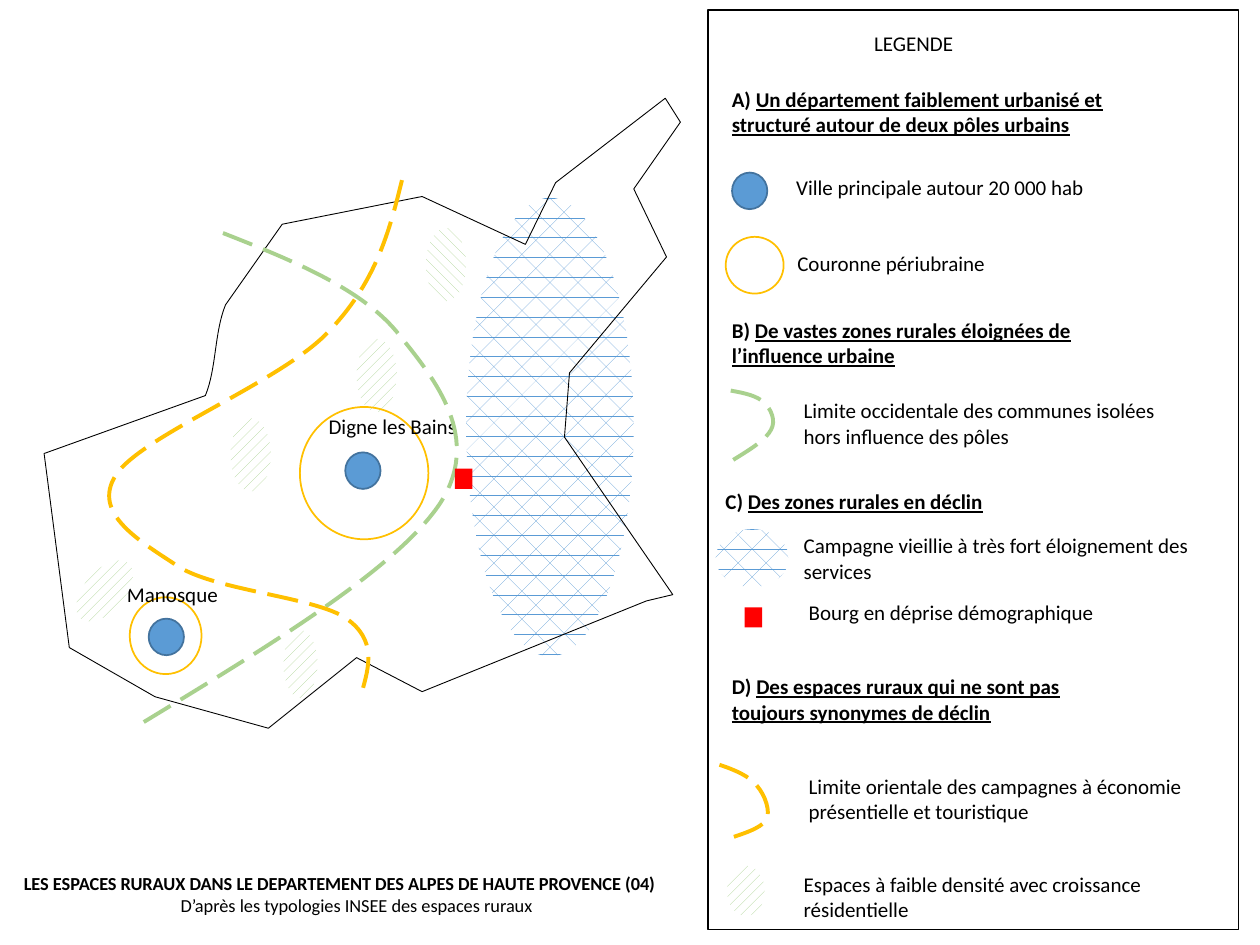
"""Build the map of rural areas in Alpes de Haute Provence with its legend."""
from dataclasses import dataclass
from typing import Optional

import lxml.etree
import pptx
import pptx.dml.color
import pptx.enum.dml
import pptx.enum.shapes
import pptx.enum.text
import pptx.oxml.ns
import pptx.util

OVAL = pptx.enum.shapes.MSO_SHAPE.OVAL
RECTANGLE = pptx.enum.shapes.MSO_SHAPE.RECTANGLE
PATTERN = pptx.enum.dml.MSO_PATTERN
UPWARD = PATTERN.DASHED_UPWARD_DIAGONAL
DOWNWARD = PATTERN.DASHED_DOWNWARD_DIAGONAL
BLACK, WHITE, RED = "000000", "FFFFFF", "FF0000"
BLUE, DARK_BLUE, GREEN, AMBER = "5B9BD5", "43739E", "A9D18E", "FFC000"


@dataclass(frozen=True)
class Style:
    kind: int = OVAL
    fill: Optional[str] = None
    pattern: Optional[int] = None
    line: Optional[str] = None
    line_width: float = 1


@dataclass(frozen=True)
class Symbol:
    style: Style
    left: float
    top: float
    width: float
    height: float
    rotation: float = 0


@dataclass(frozen=True)
class Route:
    left: float
    top: float
    width: float
    height: float
    start: tuple
    segments: tuple
    color: str
    line_width: float = 2.25
    dashed: bool = True
    closed: bool = False


@dataclass(frozen=True)
class Label:
    text: str
    left: float
    top: float
    width: float
    height: float = 0.3
    wrap: bool = False
    prefix: str = ""


TOWN = Style(fill=BLUE, line=DARK_BLUE)
RING = Style(line=AMBER)
VILLAGE = Style(kind=RECTANGLE, fill=RED)
REMOTE = Style(fill=BLUE, pattern=PATTERN.DIVOT)
GROWTH = Style(fill=GREEN, pattern=UPWARD)
GROWTH_DOWN = Style(fill=GREEN, pattern=DOWNWARD)
FRAME = Style(kind=RECTANGLE, line=BLACK, line_width=0.75)

BACK_SYMBOLS = (
    Symbol(GROWTH, 2.83, 2.69, 0.32, 0.58),
    Symbol(REMOTE, 3.7, 1.57, 1.33, 3.64),
    Symbol(REMOTE, 5.68, 4.2, 0.58, 0.46),
)
MIDDLE_SYMBOLS = (
    Symbol(TOWN, 2.74, 3.59, 0.28, 0.29),
    Symbol(TOWN, 1.18, 4.91, 0.28, 0.29),
    Symbol(TOWN, 5.81, 1.37, 0.28, 0.29),
    Symbol(RING, 2.38, 3.23, 1.02, 1.05),
    Symbol(RING, 1.03, 4.74, 0.57, 0.61),
    Symbol(RING, 5.76, 1.88, 0.46, 0.45),
)
FRONT_SYMBOLS = (
    Symbol(VILLAGE, 3.61, 3.72, 0.14, 0.16),
    Symbol(VILLAGE, 5.91, 4.82, 0.14, 0.16),
    Symbol(GROWTH, 1.83, 3.32, 0.32, 0.58),
    Symbol(GROWTH_DOWN, 3.38, 1.81, 0.32, 0.58),
    Symbol(GROWTH, 2.25, 5, 0.27, 0.54),
    Symbol(GROWTH, 0.67, 4.4, 0.32, 0.58, 40.9),
    Symbol(GROWTH, 5.77, 6.87, 0.3, 0.4),
    Symbol(FRAME, 5.62, 0.08, 4.21, 7.3),
)
BORDER = Route(0.35, 0.78, 5.05, 5, (0.35, 3.6), (
    (1.63, 3.14), (1.72, 2.92, 1.7, 2.64, 1.79, 2.42), (2.24, 1.78),
    (3.35, 1.56), (4.17, 1.94), (4.41, 1.45), (5.28, 0.78), (5.4, 0.97),
    (5.03, 1.5), (5.29, 2.04), (4.52, 2.96), (4.48, 3.47), (5.34, 4.72),
    (5.13, 4.77), (3.35, 5.49), (2.83, 5.22), (2.13, 5.78), (1.23, 5.53),
    (0.55, 5.14), (0.35, 3.6),
), BLACK, 0.5, dashed=False, closed=True)
LIMITS = (
    Route(1.11, 1.85, 2.52, 3.9, (1.77, 1.85), (
        (2.33, 2.07, 2.89, 2.3, 3.17, 2.66), (3.46, 3.02, 3.83, 3.48, 3.49, 4),
        (3.14, 4.52, 2.13, 5.13, 1.11, 5.75)), GREEN),
    Route(5.8, 3.1, 0.34, 0.55, (5.8, 3.1), (
        (5.91, 3.12, 6.01, 3.14, 6.07, 3.2), (6.12, 3.25, 6.16, 3.34, 6.12, 3.41),
        (6.08, 3.49, 5.95, 3.57, 5.82, 3.65)), GREEN),
    Route(0.87, 1.43, 2.32, 4.07, (3.19, 1.43), (
        (3.09, 1.84, 2.98, 2.25, 2.6, 2.64), (2.23, 3.03, 1.12, 3.46, 0.92, 3.77),
        (0.72, 4.08, 1.12, 4.3, 1.42, 4.5), (1.73, 4.69, 2.51, 4.74, 2.75, 4.91),
        (2.99, 5.08, 2.93, 5.29, 2.87, 5.5)), AMBER),
    Route(5.71, 6.07, 0.39, 0.6, (5.71, 6.07), (
        (5.83, 6.11, 5.95, 6.16, 6.01, 6.24), (6.07, 6.31, 6.12, 6.44, 6.08, 6.51),
        (6.03, 6.58, 5.89, 6.62, 5.74, 6.67)), AMBER),
)
LABELS = (
    Label("LEGENDE", 6.84, 0.19, 0.84),
    Label("Digne les Bains", 2.51, 3.23, 1.23),
    Label("Manosque", 0.91, 4.57, 0.93),
    Label("Un département faiblement urbanisé et structuré autour de deux pôles urbains",
          5.71, 0.64, 3.36, 0.5, True, "A) "),
    Label("Ville principale autour 20 000 hab", 6.22, 1.34, 2.51),
    Label("Couronne périubraine", 6.23, 1.94, 1.7),
    Label("De vastes zones rurales éloignées de l’influence urbaine", 5.71, 2.47, 3.36, 0.5, True, "B) "),
    Label("Limite occidentale des communes isolées hors influence des pôles", 6.28, 3.11, 3.3, 0.5, True),
    Label("Des zones rurales en déclin", 5.66, 3.83, 3.36, 0.3, True, "C) "),
    Label("Campagne vieillie à très fort éloignement des services", 6.28, 4.18, 3.63, 0.5, True),
    Label("Bourg en déprise démographique", 6.32, 4.71, 3.63, 0.3, True),
    Label("Des espaces ruraux qui ne sont pas toujours synonymes de déclin", 5.71, 5.3, 3.36, 0.5, True, "D) "),
    Label("Limite orientale des campagnes à économie présentielle et touristique", 6.32, 6.09, 3.3, 0.5, True),
    Label("Espaces à faible densité avec croissance résidentielle", 6.28, 6.87, 3.3, 0.5, True),
)
TITLE = Label("LES ESPACES RURAUX DANS LE DEPARTEMENT DES ALPES DE HAUTE PROVENCE (04)",
              0.09, 6.87, 5.48, 0.45, True)
SUBTITLE = "D’après les typologies INSEE des espaces ruraux"


def length(inches: float) -> pptx.util.Length:
    return pptx.util.Cm(inches * 2.54)


def color(value: str) -> pptx.dml.color.RGBColor:
    return pptx.dml.color.RGBColor.from_string(value)


def box(item) -> tuple:
    return tuple(map(length, (item.left, item.top, item.width, item.height)))


def set_line(shape, value: str, width: float) -> None:
    shape.line.color.rgb = color(value)
    shape.line.width = pptx.util.Pt(width)


def draw_symbol(slide, symbol: Symbol) -> None:
    style = symbol.style
    shape = slide.shapes.add_shape(style.kind, *box(symbol))
    shape.shadow.inherit = False
    shape.rotation = symbol.rotation
    if style.pattern is not None:
        shape.fill.patterned()
        shape.fill.pattern = style.pattern
        shape.fill.fore_color.rgb = color(style.fill)
        shape.fill.back_color.rgb = color(WHITE)
    elif style.fill:
        shape.fill.solid()
        shape.fill.fore_color.rgb = color(style.fill)
    else:
        shape.fill.background()
    if style.line:
        set_line(shape, style.line, style.line_width)
    else:
        shape.line.fill.background()


def add_command(outline, tag: str, coordinates: tuple, route: Route) -> None:
    command = lxml.etree.SubElement(outline, pptx.oxml.ns.qn(tag))
    for x, y in zip(coordinates[::2], coordinates[1::2]):
        lxml.etree.SubElement(command, pptx.oxml.ns.qn("a:pt"),
                              x=str(int(length(x - route.left))), y=str(int(length(y - route.top))))


def draw_route(slide, route: Route) -> None:
    builder = slide.shapes.build_freeform(*map(length, route.start))
    builder.add_line_segments([tuple(map(length, segment[-2:])) for segment in route.segments], close=False)
    shape = builder.convert_to_shape()
    shape.left, shape.top, shape.width, shape.height = box(route)
    outline = next(shape._element.iter(pptx.oxml.ns.qn("a:path")))
    for command in list(outline):
        outline.remove(command)
    outline.set("w", str(int(shape.width)))
    outline.set("h", str(int(shape.height)))
    add_command(outline, "a:moveTo", route.start, route)
    for segment in route.segments:
        add_command(outline, "a:lnTo" if len(segment) == 2 else "a:cubicBezTo", segment, route)
    if route.closed:
        add_command(outline, "a:close", (), route)
    shape.shadow.inherit = False
    shape.fill.background()
    set_line(shape, route.color, route.line_width)
    if route.dashed:
        shape.line.dash_style = pptx.enum.dml.MSO_LINE.LONG_DASH


def set_font(paragraph, size: float, bold: bool) -> None:
    font = paragraph.font
    font.name, font.size, font.bold = "Calibri", pptx.util.Pt(size), bold
    font.color.rgb = color(BLACK)


def draw_label(slide, label: Label, size: float = 12, bold: bool = False):
    frame = slide.shapes.add_textbox(*box(label)).text_frame
    frame.word_wrap = label.wrap
    frame.auto_size = pptx.enum.text.MSO_AUTO_SIZE.SHAPE_TO_FIT_TEXT
    paragraph = frame.paragraphs[0]
    set_font(paragraph, size, bold or bool(label.prefix))
    if label.prefix:
        paragraph.add_run().text = label.prefix
    run = paragraph.add_run()
    run.text = label.text
    if label.prefix:
        run.font.underline = True
    return frame


def draw_all(slide, draw, items: tuple) -> None:
    for item in items:
        draw(slide, item)


def main() -> None:
    presentation = pptx.Presentation()
    presentation.slide_width, presentation.slide_height = length(10), length(7.5)
    slide = presentation.slides.add_slide(presentation.slide_layouts[6])
    draw_all(slide, draw_symbol, BACK_SYMBOLS)
    draw_route(slide, BORDER)
    draw_all(slide, draw_symbol, MIDDLE_SYMBOLS)
    draw_all(slide, draw_label, LABELS)
    draw_all(slide, draw_route, LIMITS)
    draw_all(slide, draw_symbol, FRONT_SYMBOLS)
    subtitle = draw_label(slide, TITLE, 10.5, True).add_paragraph()
    subtitle.text = SUBTITLE
    subtitle.alignment = pptx.enum.text.PP_ALIGN.CENTER
    set_font(subtitle, 10.5, False)
    presentation.save("out.pptx")


if __name__ == "__main__":
    main()
